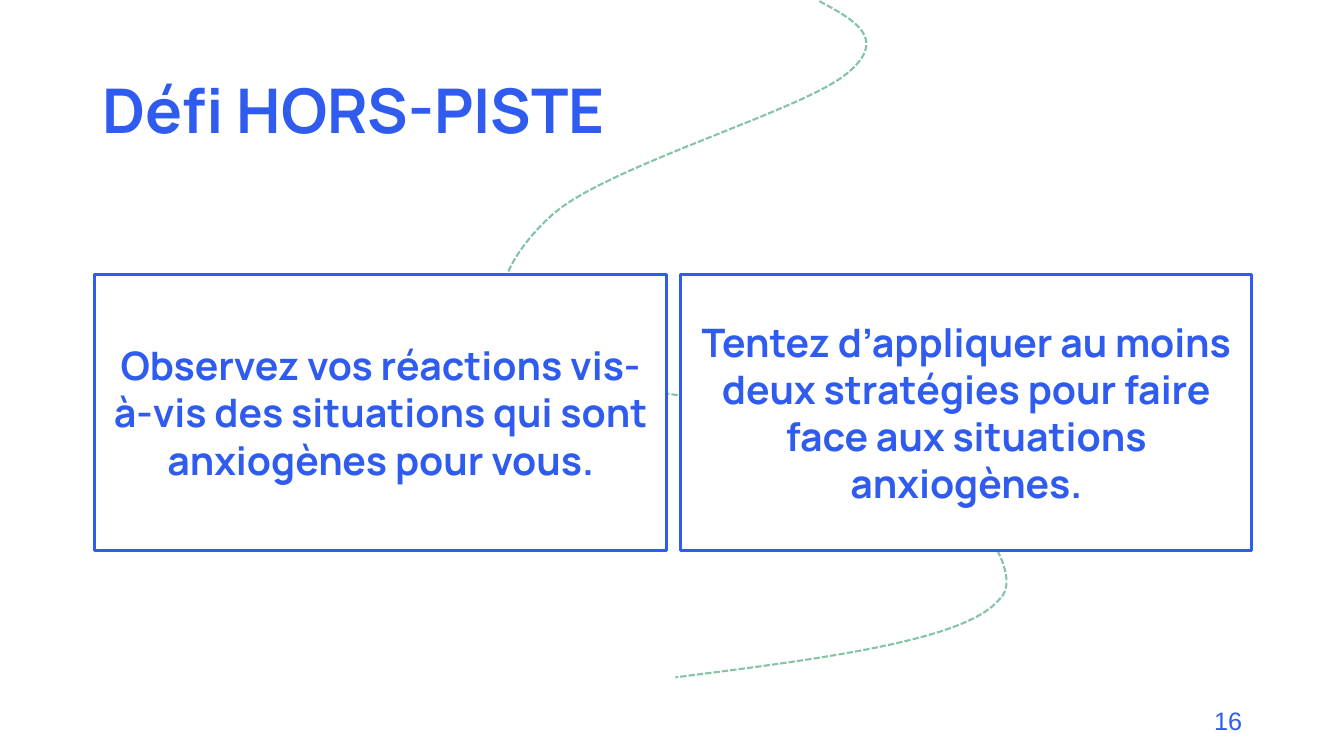
from pptx import Presentation
from pptx.dml.color import RGBColor
from pptx.enum.dml import MSO_LINE
from pptx.enum.shapes import MSO_SHAPE
from pptx.enum.text import MSO_ANCHOR, PP_ALIGN
from pptx.util import Cm, Pt

RECTANGLE = MSO_SHAPE.RECTANGLE
SHORT_DASH = MSO_LINE.SQUARE_DOT
MIDDLE = MSO_ANCHOR.MIDDLE
LEFT, CENTER, RIGHT = PP_ALIGN.LEFT, PP_ALIGN.CENTER, PP_ALIGN.RIGHT

COLORS = {"blue": "2F5CEE", "green": "86C4A7", "white": "FFFFFF"}
FORMATS = {
    "title": {"name": "Manrope", "size": Pt(44), "bold": True},
    "challenge": {"name": "Manrope", "size": Pt(28), "bold": True},
    "number": {"name": "Arial", "size": Pt(18), "bold": False},
}
CHALLENGES = [
    "Observez vos réactions vis-à-vis des situations qui sont anxiogènes pour vous.",
    "Tentez d’appliquer au moins deux stratégies pour faire face aux situations anxiogènes.",
]
# Trail: start point, then two control points and an end point per curve (cm)
TRAIL_START = (20.65, 0.03)
TRAIL_CURVES = [
    ((21.54, 0.51), (22.43, 0.99), (21.31, 1.88)),
    ((20.19, 2.79), (15.24, 4.22), (13.92, 5.41)),
    ((12.6, 6.6), (12.01, 8.13), (13.39, 9.07)),
    ((14.78, 10.01), (20.24, 10.03), (22.2, 11.05)),
    ((24.16, 12.07), (26.01, 14.48), (25.15, 15.14)),
    ((24.28, 16.15), (20.65, 16.61), (17.02, 17.07)),
]
STEPS = 20


def color(name):
    return RGBColor.from_string(COLORS[name])


def write_text(shape, text, style, alignment):
    frame = shape.text_frame
    frame.word_wrap = True
    frame.vertical_anchor = MIDDLE
    para = frame.paragraphs[0]
    para.alignment = alignment
    span = para.add_run()
    span.text = text
    for attribute, value in FORMATS[style].items():
        setattr(span.font, attribute, value)
    span.font.color.rgb = color("blue")
    return para


def bezier(points, t):
    weights = ((1 - t) ** 3, 3 * t * (1 - t) ** 2, 3 * t ** 2 * (1 - t), t ** 3)
    return tuple(sum(w * p[axis] for w, p in zip(weights, points)) for axis in (0, 1))


def add_trail(page, left, top):
    def place(point):
        return Cm(left + point[0]), Cm(top + point[1])

    vertices, start = [], TRAIL_START
    for curve in TRAIL_CURVES:
        vertices += [place(bezier((start, *curve), step / STEPS))
                     for step in range(1, STEPS + 1)]
        start = curve[-1]
    builder = page.shapes.build_freeform(*place(TRAIL_START))
    builder.add_line_segments(vertices, close=False)
    trail = builder.convert_to_shape()
    trail.shadow.inherit = False
    trail.fill.background()
    trail.line.color.rgb = color("green")
    trail.line.width = Pt(1.5)
    trail.line.dash_style = SHORT_DASH


def add_label(page, left, top, width, height, text, style, alignment):
    box = page.shapes.add_textbox(Cm(left), Cm(top), Cm(width), Cm(height))
    return write_text(box, text, style, alignment)


def add_challenges(page, left, top, width, height, gap=0.36):
    card_width = (width - gap * (len(CHALLENGES) - 1)) / len(CHALLENGES)
    for index, text in enumerate(CHALLENGES):
        card = page.shapes.add_shape(
            RECTANGLE, Cm(left + index * (card_width + gap)), Cm(top),
            Cm(card_width), Cm(height))
        card.shadow.inherit = False
        card.fill.solid()
        card.fill.fore_color.rgb = color("white")
        card.line.color.rgb = color("blue")
        card.line.width = Pt(2.25)
        write_text(card, text, "challenge", CENTER)


def main():
    deck = Presentation()
    deck.slide_width, deck.slide_height = Cm(33.87), Cm(19.05)
    page = deck.slides.add_slide(deck.slide_layouts[6])
    # Background trail and page number
    add_trail(page, 0, 0)
    add_label(page, 23.93, 17.65, 7.62, 1.02, "16", "number", RIGHT)
    # Challenge cards and title
    add_challenges(page, 2.39, 6.91, 29.16, 6.96)
    title = add_label(page, 2.34, 1.02, 29.21, 3.68, "Défi HORS-PISTE", "title", LEFT)
    title.line_spacing = 0.9
    deck.save("out.pptx")


if __name__ == "__main__":
    main()
